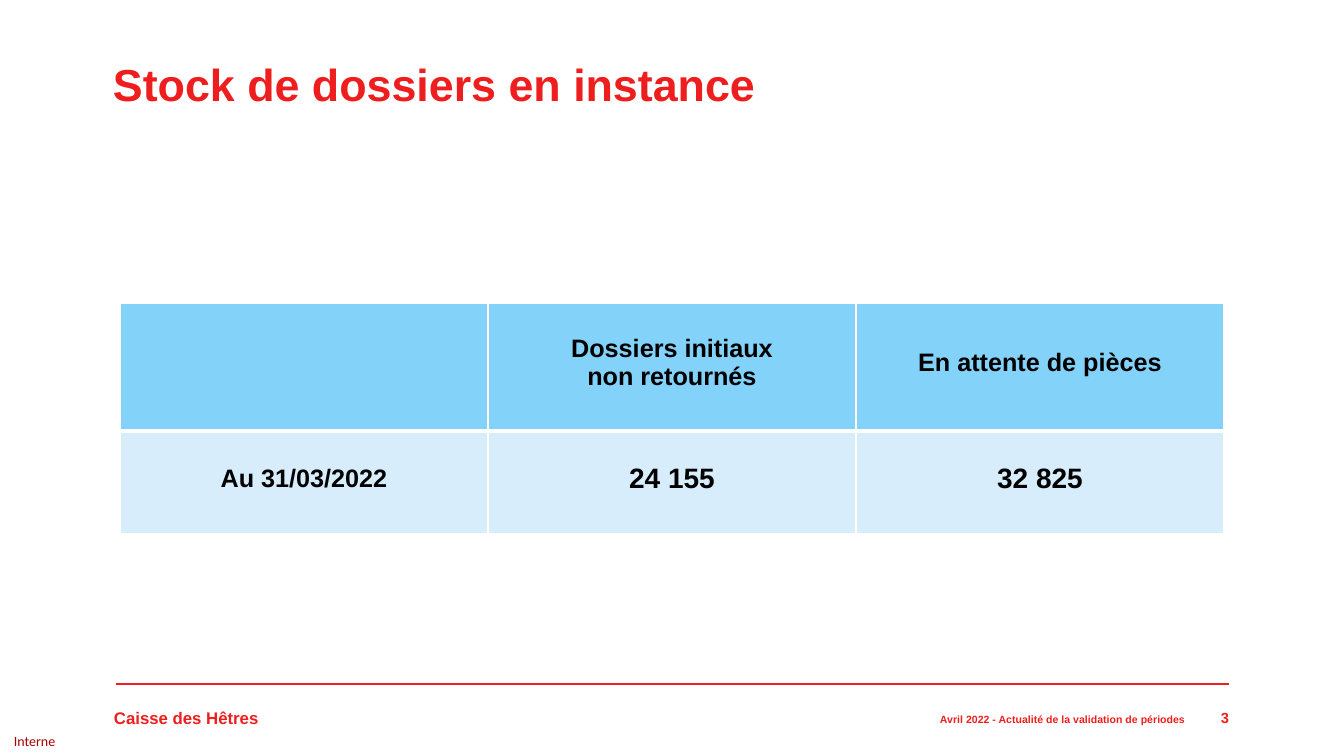
from lxml import etree
from pptx import Presentation
from pptx.dml.color import RGBColor
from pptx.enum.shapes import MSO_CONNECTOR
from pptx.enum.text import MSO_ANCHOR, PP_ALIGN
from pptx.oxml.ns import qn
from pptx.util import Emu, Pt

STRAIGHT = MSO_CONNECTOR.STRAIGHT
CENTER = PP_ALIGN.CENTER
MIDDLE = MSO_ANCHOR.MIDDLE
SLIDE_WIDTH, SLIDE_HEIGHT = 1344, 756
EMU_PER_PX = 12192000 / SLIDE_WIDTH

RED = "EF1E1E"
DARK_RED = "A80000"
BLACK = "000000"
WHITE = "FFFFFF"
HEADER_BLUE = "82D2F9"
BODY_BLUE = "D7EDFC"

COLUMN_WIDTH = 368
ROW_HEIGHTS = [128, 103]
STOCK_ROWS = [
    ["", "Dossiers initiaux\nnon retournés", "En attente de pièces"],
    ["Au 31/03/2022", "24 155", "32 825"],
]


def px(length):
    """Convert pixels to EMU."""
    return Emu(round(length * EMU_PER_PX))


def color(hex_string):
    """Convert a hex string to a colour."""
    return RGBColor.from_string(hex_string)


def style_font(font, size, hex_string, bold=True, name="Arial"):
    """Set typeface, size, weight and colour of a font."""
    font.name = name
    font.size = Pt(size)
    font.bold = bold
    font.color.rgb = color(hex_string)


def add_text(slide, text, left, top, width, height, size,
             hex_string=RED, bold=True, name="Arial", line_spacing=None):
    """Add a one-line text box without margins."""
    shape = slide.shapes.add_textbox(px(left), px(top), px(width), px(height))
    frame = shape.text_frame
    frame.word_wrap = True
    frame.margin_left = frame.margin_right = 0
    frame.margin_top = frame.margin_bottom = 0
    paragraph = frame.paragraphs[0]
    paragraph.text = text
    if line_spacing:
        paragraph.line_spacing = Pt(line_spacing)
    style_font(paragraph.font, size, hex_string, bold, name)


def add_rule(slide, left, right, y):
    """Add the red horizontal rule above the footer."""
    rule = slide.shapes.add_connector(STRAIGHT, px(left), px(y), px(right), px(y))
    rule.line.color.rgb = color(RED)
    rule.line.width = Pt(2)
    etree.SubElement(rule._element.spPr, qn("a:effectLst"))


def set_borders(cell, top, bottom):
    """Draw white cell borders, with top and bottom widths in points."""
    properties = cell._tc.get_or_add_tcPr()
    for side, width in (("L", 1), ("R", 1), ("T", top), ("B", bottom)):
        line = etree.SubElement(properties, qn(f"a:ln{side}"), w=str(Pt(width)))
        fill = etree.SubElement(line, qn("a:solidFill"))
        etree.SubElement(fill, qn("a:srgbClr"), val=WHITE)


def fill_cell(cell, text, size, is_header):
    """Write and style one table cell."""
    set_borders(cell, top=1 if is_header else 3, bottom=3 if is_header else 1)
    cell.fill.solid()
    cell.fill.fore_color.rgb = color(HEADER_BLUE if is_header else BODY_BLUE)
    cell.vertical_anchor = MIDDLE
    cell.margin_left = cell.margin_right = cell.margin_top = 0
    cell.margin_bottom = px(8)
    cell.text = text
    for paragraph in cell.text_frame.paragraphs:
        paragraph.alignment = CENTER
        style_font(paragraph.font, size, BLACK)


def add_stock_table(slide, left, top):
    """Add the table of pending files."""
    column_count = len(STOCK_ROWS[0])
    table = slide.shapes.add_table(
        len(STOCK_ROWS), column_count, px(left), px(top),
        px(COLUMN_WIDTH * column_count), px(sum(ROW_HEIGHTS))).table
    table.horz_banding = False
    for column in table.columns:
        column.width = px(COLUMN_WIDTH)
    for row_index, texts in enumerate(STOCK_ROWS):
        table.rows[row_index].height = px(ROW_HEIGHTS[row_index])
        for column_index, text in enumerate(texts):
            size = 20 if row_index and column_index else 18
            fill_cell(table.cell(row_index, column_index), text, size, row_index == 0)


def main():
    """Build and save the slide."""
    presentation = Presentation()
    presentation.slide_width = px(SLIDE_WIDTH)
    presentation.slide_height = px(SLIDE_HEIGHT)
    slide = presentation.slides.add_slide(presentation.slide_layouts[6])
    add_rule(slide, 116, 1229, 684)
    add_text(slide, "Stock de dossiers en instance", 113, 57, 660, 55, 32)
    add_text(slide, "Caisse des Hêtres", 114, 708, 160, 20, 12, line_spacing=14.2)
    add_text(slide, "3", 1221, 709, 13, 18, 10.5)
    add_text(slide, "Avril 2022 - Actualité de la validation de périodes",
             940, 713, 260, 13, 7.5)
    add_text(slide, "Interne", 14, 735, 50, 14, 10, DARK_RED, False, "Calibri", 10.4)
    add_stock_table(slide, 120, 303)
    presentation.save("out.pptx")


if __name__ == "__main__":
    main()
